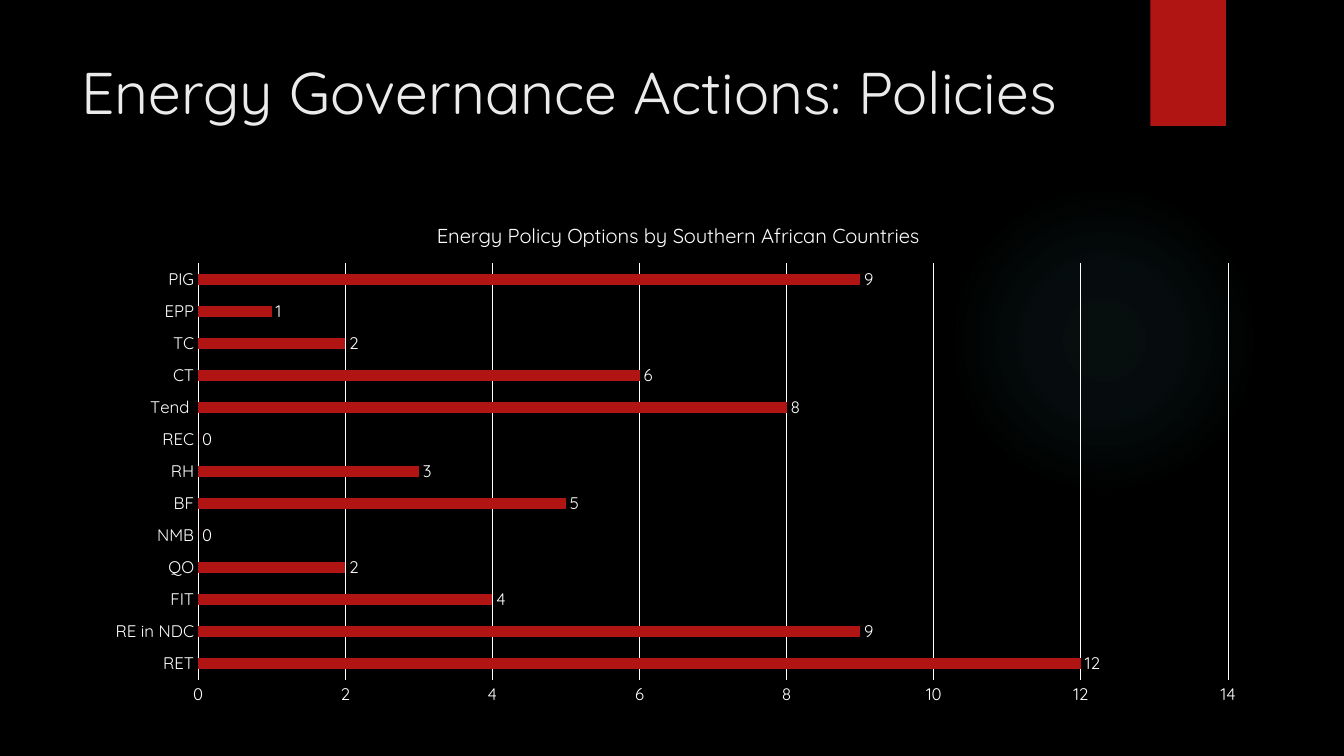
from dataclasses import dataclass

from lxml import etree
from pptx import Presentation
from pptx.chart.data import CategoryChartData
from pptx.dml.color import RGBColor
from pptx.enum.chart import XL_CHART_TYPE, XL_LABEL_POSITION, XL_TICK_MARK
from pptx.enum.shapes import MSO_SHAPE
from pptx.enum.text import MSO_ANCHOR
from pptx.oxml import parse_xml
from pptx.oxml.ns import nsdecls, qn
from pptx.util import Inches, Pt

BAR = XL_CHART_TYPE.BAR_CLUSTERED
OUTSIDE_END = XL_LABEL_POSITION.OUTSIDE_END
NO_TICK = XL_TICK_MARK.NONE
OVAL, RECT = MSO_SHAPE.OVAL, MSO_SHAPE.RECTANGLE
TOP = MSO_ANCHOR.TOP


@dataclass(frozen=True)
class Theme:
    font: str = "Quicksand"
    back: str = "000000"
    red: str = "B01513"
    glow: str = "50B9C1"
    title: str = "EBEBEB"
    white: str = "FFFFFF"
    title_size: float = 42
    chart_title_size: float = 14.4
    label_size: float = 12
    line: float = 0.75


THEME = Theme()
POLICIES = {
    "RET": 12, "RE in NDC": 9, "FIT": 4, "QO": 2, "NMB": 0, "BF": 5, "RH": 3,
    "REC": 0, "Tend ": 8, "CT": 6, "TC": 2, "EPP": 1, "PIG": 9,
}


def rgb(value):
    return RGBColor.from_string(value)


def inches(box):
    return [Inches(v) for v in box]


def style_font(font, size, color):
    font.name = THEME.font
    font.size = Pt(size)
    font.bold = False
    font.color.rgb = rgb(color)


def add_plain(s, kind, box):
    sp = s.shapes.add_shape(kind, *inches(box))
    sp.shadow.inherit = False
    sp.line.fill.background()
    return sp


def add_glow(s, box):
    sp = add_plain(s, OVAL, box)
    stops = "".join(
        f'<a:gs pos="{pos}000"><a:srgbClr val="{THEME.glow}">'
        f'<a:alpha val="{alpha}000"/></a:srgbClr></a:gs>'
        for pos, alpha in ((0, 7), (36, 6), (69, 0))
    )
    grad = parse_xml(
        f'<a:gradFill {nsdecls("a")}><a:gsLst>{stops}</a:gsLst><a:path path="circle">'
        '<a:fillToRect l="50000" t="50000" r="50000" b="50000"/></a:path></a:gradFill>'
    )
    sp._element.spPr.find(qn("a:prstGeom")).addnext(grad)


def add_ribbon(s, box):
    sp = add_plain(s, RECT, box)
    sp.fill.solid()
    sp.fill.fore_color.rgb = rgb(THEME.red)
    effects = sp._element.spPr.find(qn("a:effectLst"))
    effects.append(parse_xml(
        f'<a:outerShdw {nsdecls("a")} blurRad="{Pt(3)}" dist="{Pt(2)}" dir="5400000">'
        '<a:srgbClr val="000000"><a:alpha val="45000"/></a:srgbClr></a:outerShdw>'
    ))


def add_title(s, box, text):
    tf = s.shapes.add_textbox(*inches(box)).text_frame
    tf.word_wrap = True
    tf.vertical_anchor = TOP
    p = tf.paragraphs[0]
    p.text = text
    style_font(p.font, THEME.title_size, THEME.title)


def style_axis(axis):
    axis.major_tick_mark = axis.minor_tick_mark = NO_TICK
    style_font(axis.tick_labels.font, THEME.label_size, THEME.white)


def style_line(line):
    line.color.rgb = rgb(THEME.white)
    line.width = Pt(THEME.line)


def place_plot(chart, shares):
    area = chart._chartSpace.chart.plotArea
    for old in area.findall(qn("c:layout")):
        area.remove(old)
    layout = etree.Element(qn("c:layout"))
    manual = etree.SubElement(layout, qn("c:manualLayout"))
    settings = {"layoutTarget": "inner", "xMode": "edge", "yMode": "edge", **shares}
    for tag, value in settings.items():
        etree.SubElement(manual, qn(f"c:{tag}")).set("val", str(value))
    area.insert(0, layout)


def add_policy_chart(s, box, title, values):
    data = CategoryChartData()
    data.categories = list(values)
    data.add_series("Series 1", list(values.values()))
    chart = s.shapes.add_chart(BAR, *inches(box), data).chart
    style_font(chart.font, THEME.label_size, THEME.white)
    chart.has_legend = False
    chart.has_title = True
    p = chart.chart_title.text_frame.paragraphs[0]
    p.text = title
    style_font(p.font, THEME.chart_title_size, THEME.white)
    chart.chart_title.include_in_layout = False

    style_axis(chart.category_axis)
    style_line(chart.category_axis.format.line)
    axis = chart.value_axis
    style_axis(axis)
    axis.format.line.fill.background()
    axis.has_major_gridlines = True
    style_line(axis.major_gridlines.format.line)
    axis.minimum_scale, axis.maximum_scale, axis.major_unit = 0, 14, 2

    plot = chart.plots[0]
    plot.gap_width = 182
    plot.vary_by_categories = False
    fill = plot.series[0].format.fill
    fill.solid()
    fill.fore_color.rgb = rgb(THEME.red)
    plot.has_data_labels = True
    labels = plot.data_labels
    labels.show_value = True
    labels.position = OUTSIDE_END
    style_font(labels.font, THEME.label_size, THEME.white)
    place_plot(chart, {"x": 0.09, "y": 0.12, "w": 0.88, "h": 0.81})


def build_chart_slide(prs):
    s = prs.slides.add_slide(prs.slide_layouts[6])
    s.background.fill.solid()
    s.background.fill.fore_color.rgb = rgb(THEME.back)
    add_glow(s, (9.41, 1.83, 3.08, 3.08))
    add_ribbon(s, (11.41, 0, 0.75, 1.25))
    add_title(s, (0.71, 0.5, 10.29, 1.53), "Energy Governance Actions: Policies")
    add_policy_chart(s, (0.92, 2, 11.61, 5.1),
                     "Energy Policy Options by Southern African Countries", POLICIES)


def main():
    prs = Presentation()
    prs.slide_width, prs.slide_height = Inches(13.33), Inches(7.5)
    build_chart_slide(prs)
    prs.save("out.pptx")


if __name__ == "__main__":
    main()
